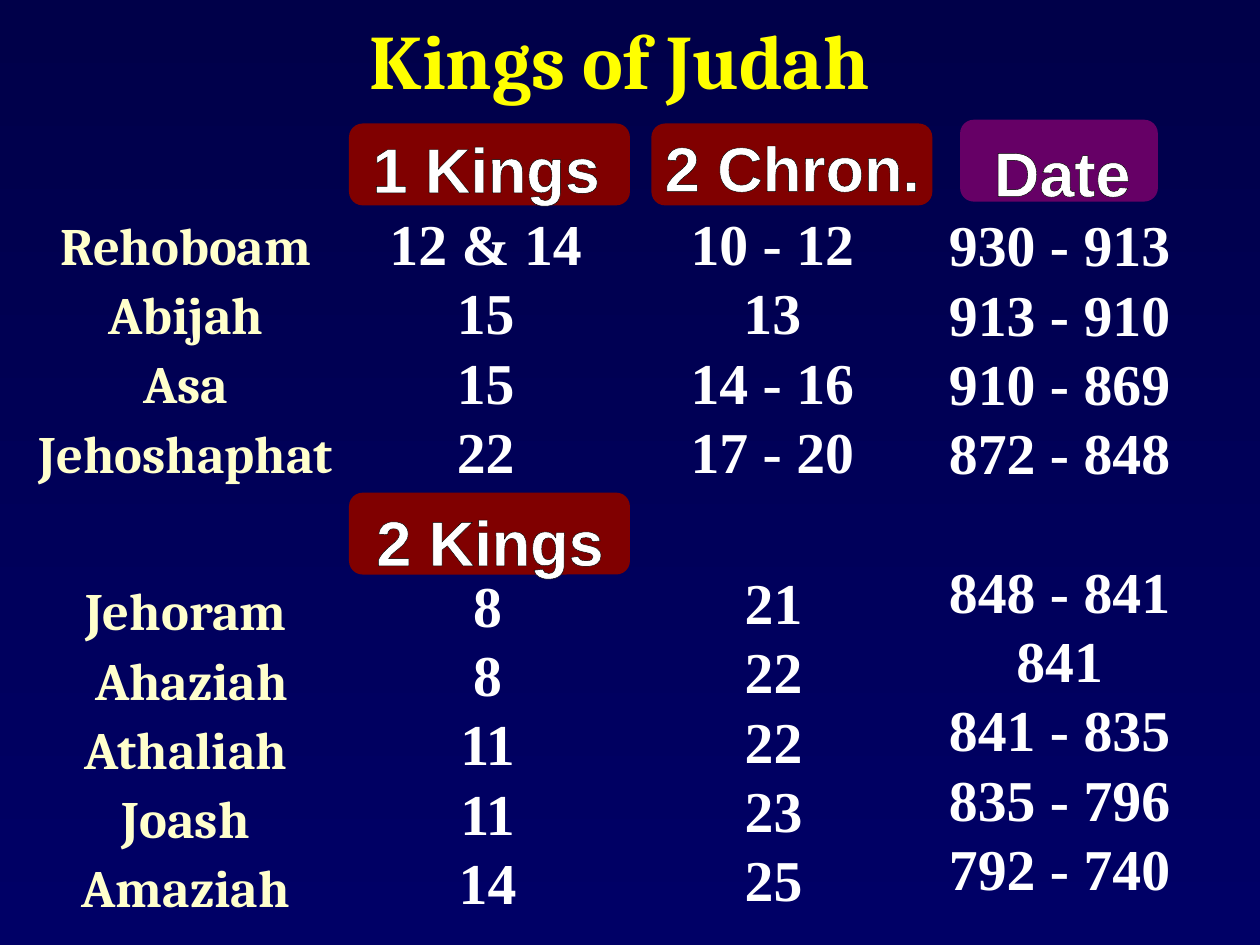
from lxml.etree import SubElement
from pptx import Presentation
from pptx.dml.color import RGBColor
from pptx.enum.shapes import MSO_SHAPE as Shape
from pptx.enum.text import MSO_ANCHOR as Anchor, MSO_AUTO_SIZE as AutoSize, PP_ALIGN as Align
from pptx.oxml.ns import qn
from pptx.util import Inches, Pt

NAVY_TOP = RGBColor(0x00, 0x00, 0x49)
NAVY_BOTTOM = RGBColor(0x00, 0x00, 0x66)
MAROON = RGBColor(0x80, 0x00, 0x00)
PURPLE = RGBColor(0x66, 0x00, 0x66)
YELLOW = RGBColor(0xFF, 0xFF, 0x00)
CREAM = RGBColor(0xFF, 0xFF, 0xCC)
WHITE = RGBColor(0xFF, 0xFF, 0xFF)

COLUMNS, ROWS = 100, 75
LINE_ROWS = 5.5       # height of one line in a list
INSET_ROWS = 1        # top and bottom margins of a list together


class KingsSlide:
    """Places elements on a grid of COLUMNS by ROWS cells."""

    def __init__(self, deck):
        self.cell_width = deck.slide_width / COLUMNS
        self.cell_height = deck.slide_height / ROWS
        self.slide = deck.slides.add_slide(deck.slide_layouts[5])

    def box(self, left, top, width, height):
        return (round(left * self.cell_width), round(top * self.cell_height),
                round(width * self.cell_width), round(height * self.cell_height))

    def background(self, top_color, bottom_color):
        fill = self.slide.background.fill
        fill.gradient()
        fill.gradient_angle = 270
        for stop, color, position in zip(fill.gradient_stops, (top_color, bottom_color), (0, 1)):
            stop.color.rgb = color
            stop.position = position

    def set_lines(self, frame, lines, font_name, size, color, spacing):
        frame.text = "\n".join(lines)
        frame.word_wrap = False
        frame.auto_size = AutoSize.NONE
        frame.vertical_anchor = Anchor.TOP
        for paragraph in frame.paragraphs:
            paragraph.alignment = Align.CENTER
            paragraph.line_spacing = spacing
            for run in paragraph.runs:
                run.font.name = font_name
                run.font.size = Pt(size)
                run.font.bold = True
                run.font.color.rgb = color

    def title(self, text, *place):
        title = self.slide.shapes.title
        title.left, title.top, title.width, title.height = self.box(*place)
        self.set_lines(title.text_frame, [text], "Cambria", 44, YELLOW, 1.1)

    def plate(self, color, *place):
        plate = self.slide.shapes.add_shape(Shape.ROUNDED_RECTANGLE, *self.box(*place))
        plate.shadow.inherit = False
        plate.fill.solid()
        plate.fill.fore_color.rgb = color
        plate.line.fill.background()

    def heading(self, text, *place):
        """Adds white column-heading text with a thin black outline."""
        frame = self.slide.shapes.add_textbox(*self.box(*place)).text_frame
        self.set_lines(frame, [text], "Arial", 36, WHITE, 0.9)
        properties = frame.paragraphs[0].runs[0].font._element
        outline = SubElement(properties, qn("a:ln"), w=str(Pt(0.75)))
        fill = SubElement(outline, qn("a:solidFill"))
        SubElement(fill, qn("a:srgbClr"), val="000000")
        properties.insert(0, outline)

    def text_list(self, lines, left, top, width, style):
        height = len(lines) * LINE_ROWS + INSET_ROWS
        frame = self.slide.shapes.add_textbox(*self.box(left, top, width, height)).text_frame
        self.set_lines(frame, lines, *style)


NAME_STYLE = ("Cambria", 30, CREAM, 1.1)
NUMBER_STYLE = ("Times New Roman", 33, WHITE, 1.0)

# color, plate box, heading, heading box
HEADINGS = [
    (PURPLE, (76.2, 9.5, 15.7, 6.5), "Date", (78.2, 10.8, 12.2, 3.9)),
    (MAROON, (51.7, 9.8, 22.3, 6.5), "2 Chron.", (52.7, 10.4, 20.4, 4.2)),
    (MAROON, (27.7, 9.8, 22.3, 6.5), "1 Kings", (28.8, 10.5, 19.6, 5)),
    (MAROON, (27.7, 39.1, 22.3, 6.5), "2 Kings", (29.1, 40.1, 19.6, 5)),
]

# lines, left, top, width, style
LISTS = [
    (["Rehoboam", "Abijah", "Asa", "Jehoshaphat"], 0, 15.9, 29.5, NAME_STYLE),
    (["Jehoram", " Ahaziah", "Athaliah", "Joash", "Amaziah"], 0, 44.9, 29.5, NAME_STYLE),
    (["12 & 14", "15", "15", "22"], 29.9, 16, 17.3, NUMBER_STYLE),
    (["8", "8", "11", "11", "14"], 35.4, 44.7, 6.6, NUMBER_STYLE),
    (["10 - 12", "13", "14 - 16", "17 - 20"], 53.8, 16, 15, NUMBER_STYLE),
    (["21", "22", "22", "23", "25"], 58.1, 44.5, 6.6, NUMBER_STYLE),
    (["930 - 913", "913 - 910", "910 - 869", "872 - 848"], 74.3, 16.1, 19.6, NUMBER_STYLE),
    (["848 - 841", "841", "841 - 835", "835 - 796", "792 - 740"],
     74.3, 43.6, 19.6, NUMBER_STYLE),
]


def main():
    deck = Presentation()
    deck.slide_width, deck.slide_height = Inches(10), Inches(7.5)
    kings = KingsSlide(deck)
    kings.background(NAVY_TOP, NAVY_BOTTOM)
    kings.title("Kings of Judah", 24.7, -0.2, 49, 9.1)
    for color, plate_box, text, text_box in HEADINGS:
        kings.plate(color, *plate_box)
        kings.heading(text, *text_box)
    for entry in LISTS:
        kings.text_list(*entry)
    deck.save("out.pptx")


if __name__ == "__main__":
    main()
